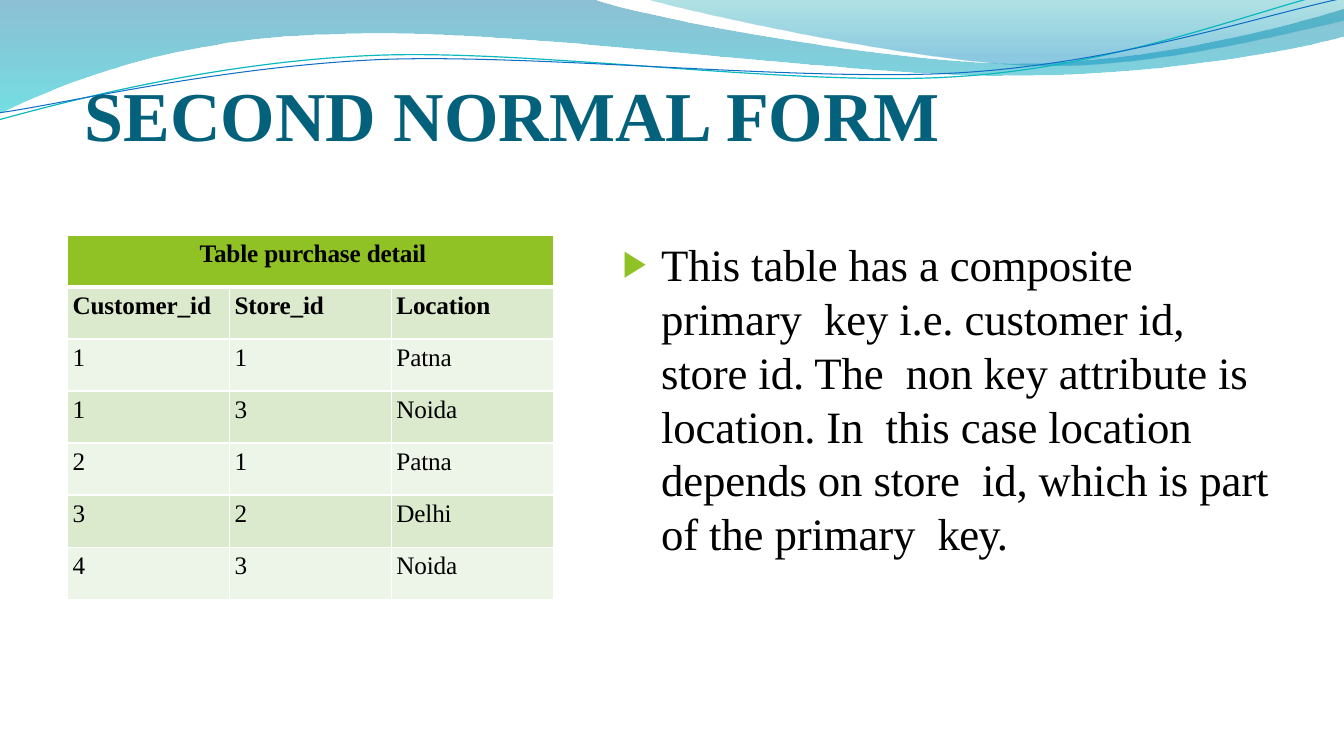
from lxml import etree
from pptx import Presentation
from pptx.dml.color import RGBColor
from pptx.enum.text import MSO_ANCHOR, MSO_AUTO_SIZE, PP_ALIGN
from pptx.oxml.ns import qn
from pptx.util import Cm, Pt

LEFT, CENTER = PP_ALIGN.LEFT, PP_ALIGN.CENTER
TOP, BOTTOM = MSO_ANCHOR.TOP, MSO_ANCHOR.BOTTOM
NO_AUTOFIT = MSO_AUTO_SIZE.NONE

FONT = "Times New Roman"
BLACK = RGBColor(0x00, 0x00, 0x00)
WHITE = RGBColor(0xFF, 0xFF, 0xFF)
TITLE_BLUE = RGBColor(0x04, 0x61, 0x7B)
GREEN = RGBColor(0x90, 0xC2, 0x25)
BAND_DARK = RGBColor(0xDB, 0xE9, 0xCD)
BAND_LIGHT = RGBColor(0xED, 0xF4, 0xE8)
LINE_TEAL = RGBColor(0x0A, 0xB8, 0xBF)
LINE_BLUE = RGBColor(0x0F, 0x6F, 0xC6)

# Gradient stops: position, colour, opacity in percent
WIDE_STOPS = [(0, RGBColor(0x00, 0x74, 0xA1), 45), (1, RGBColor(0x00, 0xC6, 0xCF), 55)]
RIGHT_STOPS = [(0, RGBColor(0x00, 0xA1, 0xA9), 30), (0.8, RGBColor(0x00, 0x8B, 0xBF), 45)]

# Outlines in cm: one point is a straight step, three points are a Bezier curve
WIDE_WAVE = [
    [(0, 0)], [(14.91, -0.03)],
    [(16.1, 0.43), (22.48, 1.6), (25.68, 1.6)],
    [(28.91, 1.6), (32.46, 0.66), (33.86, 0.23)],
    [(33.91, 0.91)],
    [(33.3, 1.12), (29.46, 1.93), (25.25, 1.91)],
    [(21.06, 1.91), (12.93, 0.71), (8.71, 0.86)],
    [(4.37, 0.91), (1.55, 2.11), (-0.03, 2.87)],
]
RIGHT_WAVE = [
    [(16.23, -0.03)],
    [(17.25, 0.28), (23.09, 1.57), (26.04, 1.65)],
    [(28.98, 1.75), (32.56, 0.81), (33.86, 0.53)],
    [(33.86, 0)],
]
TEAL_CURVE = [
    [(-0.03, 3.02)],
    [(1.63, 2.57), (5.36, 1.57), (9.37, 1.4)],
    [(13.39, 1.22), (20.07, 2.21), (24.13, 1.93)],
    [(28.19, 1.68), (31.8, 0.2), (33.81, -0.25)],
]
BLUE_CURVE = [
    [(0, 2.84)],
    [(1.6, 2.62), (5.54, 1.68), (9.6, 1.5)],
    [(13.64, 1.35), (20.22, 2.08), (24.26, 1.83)],
    [(28.32, 1.57), (31.88, 0.36), (33.88, -0.05)],
]

PURCHASES = [
    ("Customer_id", "Store_id", "Location"),
    ("1", "1", "Patna"),
    ("1", "3", "Noida"),
    ("2", "1", "Patna"),
    ("3", "2", "Delhi"),
    ("4", "3", "Noida"),
]
EXPLANATION = (
    "This table has a composite primary  key i.e. customer id, store id. "
    "The  non key attribute is location. In  this case location depends on "
    "store  id, which is part of the primary  "
)


def write_text(frame, runs, size=18, color=BLACK, bold=False, align=LEFT, before=1):
    """Fill the first paragraph with (text, letter spacing in pt) runs."""
    paragraph = frame.paragraphs[0]
    paragraph.alignment = align
    paragraph.space_before = Pt(before)
    for text, spacing in runs:
        run = paragraph.add_run()
        run.text = text
        run.font.name = FONT
        run.font.size = Pt(size)
        run.font.bold = bold
        run.font.color.rgb = color
        run.font._element.set("spc", str(round(spacing * 100)))
    return paragraph


def set_frame(frame, anchor, top=0.03, right=0):
    frame.word_wrap = True
    frame.auto_size = NO_AUTOFIT
    frame.vertical_anchor = anchor
    frame.margin_left = frame.margin_bottom = 0
    frame.margin_top, frame.margin_right = Cm(top), Cm(right)


def add_outline(slide, segments, close):
    start, *corners = [(Cm(x), Cm(y)) for segment in segments for x, y in segment]
    builder = slide.shapes.build_freeform(*start)
    builder.add_line_segments(corners, close=close)
    outline = builder.convert_to_shape()
    outline.shadow.inherit = False
    # Join each group of three steps into one Bezier curve
    steps = iter(list(outline._element.iter(qn("a:lnTo"))))
    for segment in segments[1:]:
        group = [next(steps) for _ in segment]
        if len(group) == 3:
            bezier = etree.Element(qn("a:cubicBezTo"))
            group[0].addprevious(bezier)
            for step in group:
                bezier.append(step[0])
                step.getparent().remove(step)
    return outline


def add_wave(slide, segments, stops):
    wave = add_outline(slide, segments, close=True)
    wave.line.fill.background()
    wave.fill.gradient()
    wave.fill.gradient_angle = 270
    for stop, (position, color, _) in zip(wave.fill.gradient_stops, stops):
        stop.position = position
        stop.color.rgb = color
    for tint, (_, _, opacity) in zip(wave._element.spPr.iter(qn("a:srgbClr")), stops):
        etree.SubElement(tint, qn("a:alpha"), val=str(opacity * 1000))


def add_curve(slide, segments, color, width):
    curve = add_outline(slide, segments, close=False)
    curve.fill.background()
    curve.line.color.rgb = color
    curve.line.width = Pt(width)


def set_borders(cell, top=1, bottom=1):
    properties = cell._tc.get_or_add_tcPr()
    widths = (("a:lnL", 1), ("a:lnR", 1), ("a:lnT", top), ("a:lnB", bottom))
    for index, (side, width) in enumerate(widths):
        border = etree.Element(qn(side), w=str(Pt(width)))
        solid = etree.SubElement(border, qn("a:solidFill"))
        etree.SubElement(solid, qn("a:srgbClr"), val=str(WHITE))
        properties.insert(index, border)


def format_cell(cell, text, fill, **text_format):
    cell.margin_left = cell.margin_right = cell.margin_bottom = 0
    cell.margin_top = Cm(0.12)
    cell.vertical_anchor = TOP
    cell.fill.solid()
    cell.fill.fore_color.rgb = fill
    paragraph = write_text(cell.text_frame, [(text, -0.1)], before=3.1, **text_format)
    paragraph._p.get_or_add_pPr().set("marL", str(Cm(0.13)))


def add_purchase_table(slide):
    rows, columns = len(PURCHASES) + 1, len(PURCHASES[0])
    table = slide.shapes.add_table(rows, columns, Cm(1.7), Cm(5.92),
                                   Cm(12.24), Cm(9.18)).table
    table.horz_banding = False
    # Heading across all columns
    heading = table.cell(0, 0)
    heading.merge(table.cell(0, columns - 1))
    format_cell(heading, "Table purchase detail", GREEN, bold=True, align=CENTER)
    for column in range(columns):
        set_borders(table.cell(0, column), bottom=3)
    # Column names and banded records
    for row, record in enumerate(PURCHASES, start=1):
        for column, text in enumerate(record):
            cell = table.cell(row, column)
            format_cell(cell, text, BAND_DARK if row % 2 else BAND_LIGHT, bold=row == 1)
            set_borders(cell, top=3 if row == 1 else 1)


def add_explanation(slide):
    explanation = slide.shapes.add_textbox(Cm(15.67), Cm(5.92), Cm(16.71), Cm(8.26))
    set_frame(explanation.text_frame, TOP, top=0.05, right=0.2)
    paragraph = write_text(explanation.text_frame,
                           [(EXPLANATION, -0.1), ("key.", -0.6)], size=32)
    properties = paragraph._p.get_or_add_pPr()
    properties.set("marL", str(Cm(0.99)))
    properties.set("indent", str(Cm(-0.97)))
    bullet_color = etree.SubElement(properties, qn("a:buClr"))
    etree.SubElement(bullet_color, qn("a:srgbClr"), val=str(GREEN))
    etree.SubElement(properties, qn("a:buSzPct"), val="81000")
    etree.SubElement(properties, qn("a:buFont"), typeface=FONT)
    etree.SubElement(properties, qn("a:buChar"), char="▶")


def place_title(slide):
    title = slide.shapes.title
    title.left, title.top, title.width, title.height = Cm(2.13), Cm(1.75), Cm(26.06), Cm(2.18)
    set_frame(title.text_frame, BOTTOM)
    write_text(title.text_frame, [("SECOND NORMAL FORM", 0)],
               size=50, color=TITLE_BLUE, bold=True)
    # Bring the title in front of the waves
    slide.shapes._spTree.append(title._element)


def main():
    presentation = Presentation()
    presentation.slide_width, presentation.slide_height = Cm(33.87), Cm(19.05)
    slide = presentation.slides.add_slide(presentation.slide_layouts[5])
    # Decorative waves
    add_wave(slide, WIDE_WAVE, WIDE_STOPS)
    add_wave(slide, RIGHT_WAVE, RIGHT_STOPS)
    add_curve(slide, TEAL_CURVE, LINE_TEAL, 0.85)
    add_curve(slide, BLUE_CURVE, LINE_BLUE, 0.75)
    # Content
    place_title(slide)
    add_purchase_table(slide)
    add_explanation(slide)
    presentation.save("out.pptx")


if __name__ == "__main__":
    main()
